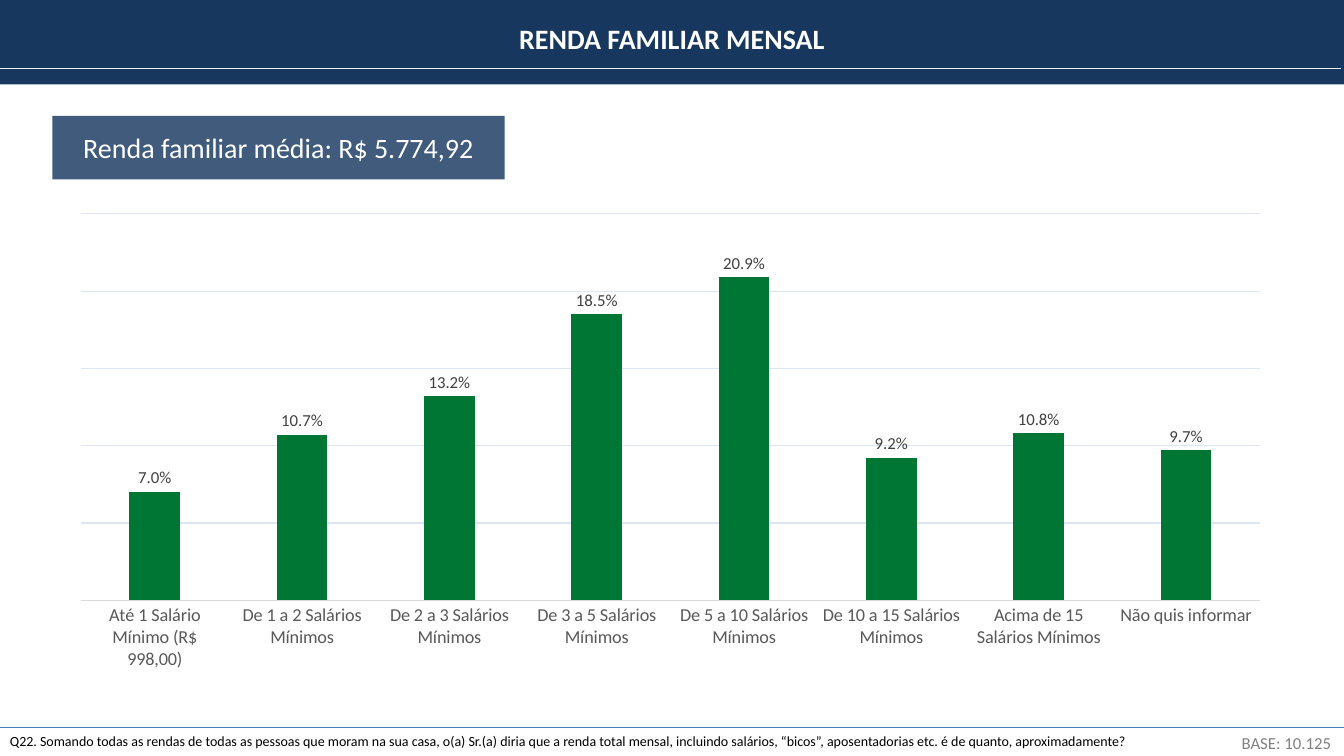
from lxml import etree
from pptx import Presentation
from pptx import util as u
from pptx.chart.data import CategoryChartData
from pptx.dml.color import RGBColor
from pptx.enum import chart as ch, shapes, text
from pptx.oxml import parse_xml
from pptx.oxml.ns import nsdecls, qn

NAVY, GREEN, WHITE = "17375E", "007635", "FFFFFF"
WIDTH, HEIGHT = 33.87, 19.05
LEFT, CENTER, RIGHT = text.PP_ALIGN.LEFT, text.PP_ALIGN.CENTER, text.PP_ALIGN.RIGHT


def rgb(value):
    return RGBColor.from_string(value)


class Deck:
    font = "Calibri"

    def __init__(self):
        self.prs = Presentation()
        self.prs.slide_width, self.prs.slide_height = u.Cm(WIDTH), u.Cm(HEIGHT)
        self.s = self.prs.slides.add_slide(self.prs.slide_layouts[5])

    def style(self, font, size, color, bold=False):
        font.name, font.size, font.bold = self.font, u.Pt(size), bold
        font.color.rgb = rgb(color)

    def set_text(self, sp, words, size, color, align, bold=False, anchor=text.MSO_ANCHOR.TOP):
        tf = sp.text_frame
        tf.text, tf.word_wrap = words, True
        tf.auto_size, tf.vertical_anchor = text.MSO_AUTO_SIZE.NONE, anchor
        p = tf.paragraphs[0]
        p.alignment = align
        self.style(p.font, size, color, bold)

    def title(self, words, x, y, w, h):
        sp = self.s.shapes.title
        sp.left, sp.top, sp.width, sp.height = map(u.Cm, (x, y, w, h))
        self.set_text(sp, words, 20, WHITE, CENTER, bold=True)
        self.s.shapes._spTree.append(sp._element)  # bring above the band

    def label(self, words, x, y, w, h, size, color, align):
        sp = self.s.shapes.add_textbox(*map(u.Cm, (x, y, w, h)))
        self.set_text(sp, words, size, color, align)

    def rect(self, x, y, w, h, color, alpha=100):
        sp = self.s.shapes.add_shape(shapes.MSO_SHAPE.RECTANGLE, *map(u.Cm, (x, y, w, h)))
        sp.shadow.inherit = False
        sp.fill.solid()
        sp.fill.fore_color.rgb = rgb(color)
        sp.line.fill.background()
        if alpha < 100:
            clr = sp._element.spPr.find(".//" + qn("a:srgbClr"))
            etree.SubElement(clr, qn("a:alpha"), val=str(alpha * 1000))
        return sp

    def rule(self, x1, x2, y, color, width):
        line = self.s.shapes.add_connector(
            shapes.MSO_CONNECTOR.STRAIGHT, *map(u.Cm, (x1, y, x2, y)))
        line.line.color.rgb, line.line.width = rgb(color), u.Pt(width)
        etree.SubElement(line._element.spPr, qn("a:effectLst"))

    def columns(self, x, y, w, h, values, layout):
        data = CategoryChartData(number_format="0.0%")
        data.categories = list(values)
        data.add_series("Series 1", list(values.values()))
        chart = self.s.shapes.add_chart(
            ch.XL_CHART_TYPE.COLUMN_CLUSTERED, *map(u.Cm, (x, y, w, h)), data).chart
        chart.has_legend = chart.has_title = False
        self.style(chart.font, 10, "000000")

        # Axes
        cat, val = chart.category_axis, chart.value_axis
        cat.major_tick_mark = cat.minor_tick_mark = ch.XL_TICK_MARK.NONE
        self.style(cat.tick_labels.font, 13, "595959")
        cat.format.line.color.rgb, cat.format.line.width = rgb("D9D9D9"), u.Pt(0.75)
        val.visible = False
        val.minimum_scale, val.maximum_scale, val.major_unit = 0, 0.25, 0.05
        val.tick_labels.number_format = "0.0%"
        val.tick_labels.number_format_is_linked = False
        grid = val.major_gridlines.format.line
        grid.color.rgb, grid.width = rgb("DCE6F2"), u.Pt(0.75)

        # Columns and value labels
        plot = chart.plots[0]
        plot.gap_width, plot.overlap, plot.vary_by_categories = 191, -27, False
        fill = plot.series[0].format.fill
        fill.solid()
        fill.fore_color.rgb = rgb(GREEN)
        labels = plot.series[0].data_labels
        labels.show_value, labels.position = True, ch.XL_LABEL_POSITION.OUTSIDE_END
        labels.number_format, labels.number_format_is_linked = "0.0%", False
        self.style(labels.font, 12, "404040")

        # Plot area placement
        area = chart._chartSpace.chart.plotArea
        for old in area.findall(qn("c:layout")):
            area.remove(old)
        sides = "".join(f'<c:{k} val="{v}"/>' for k, v in zip("xywh", layout))
        area.insert(0, parse_xml(
            f'<c:layout {nsdecls("c")}><c:manualLayout><c:layoutTarget val="inner"/>'
            f'<c:xMode val="edge"/><c:yMode val="edge"/>{sides}'
            '</c:manualLayout></c:layout>'))


def main():
    deck = Deck()

    # Footer question
    deck.rule(0, WIDTH, 18.34, "4B7EBC", 0.75)
    deck.label("Q22. Somando todas as rendas de todas as pessoas que moram na sua casa, "
               "o(a) Sr.(a) diria que a renda total mensal, incluindo salários, “bicos”, "
               "aposentadorias etc. é de quanto, aproximadamente?",
               0, 18.34, 33.8, 0.69, 10, "000000", LEFT)

    # Header band
    deck.rect(-0.02, 0, WIDTH + 0.02, 2.13, NAVY)
    deck.title("RENDA FAMILIAR MENSAL", 0, 0.41, WIDTH, 1.12)
    deck.rule(-0.07, 33.8, 1.73, "F2F2F2", 1)

    # Income distribution
    incomes = {
        "Até 1 Salário Mínimo (R$ 998,00)": 0.07,
        "De 1 a 2 Salários Mínimos": 0.107,
        "De 2 a 3 Salários Mínimos": 0.132,
        "De 3 a 5 Salários Mínimos": 0.185,
        "De 5 a 10 Salários Mínimos": 0.209,
        "De 10 a 15 Salários Mínimos": 0.092,
        "Acima de 15 Salários Mínimos": 0.108,
        "Não quis informar": 0.097,
    }
    deck.columns(1.68, 4.55, 30.4, 12.52, incomes, (0.012, 0.067, 0.977, 0.778))

    # Average income and sample base
    average = deck.rect(1.32, 2.92, 11.4, 1.6, NAVY, alpha=82)
    deck.set_text(average, "Renda familiar média: R$ 5.774,92", 20, WHITE, CENTER,
                  anchor=text.MSO_ANCHOR.MIDDLE)
    deck.label("BASE: 10.125", 30.12, 18.34, 3.68, 0.76, 12, "808080", RIGHT)

    deck.prs.save("out.pptx")


if __name__ == "__main__":
    main()
